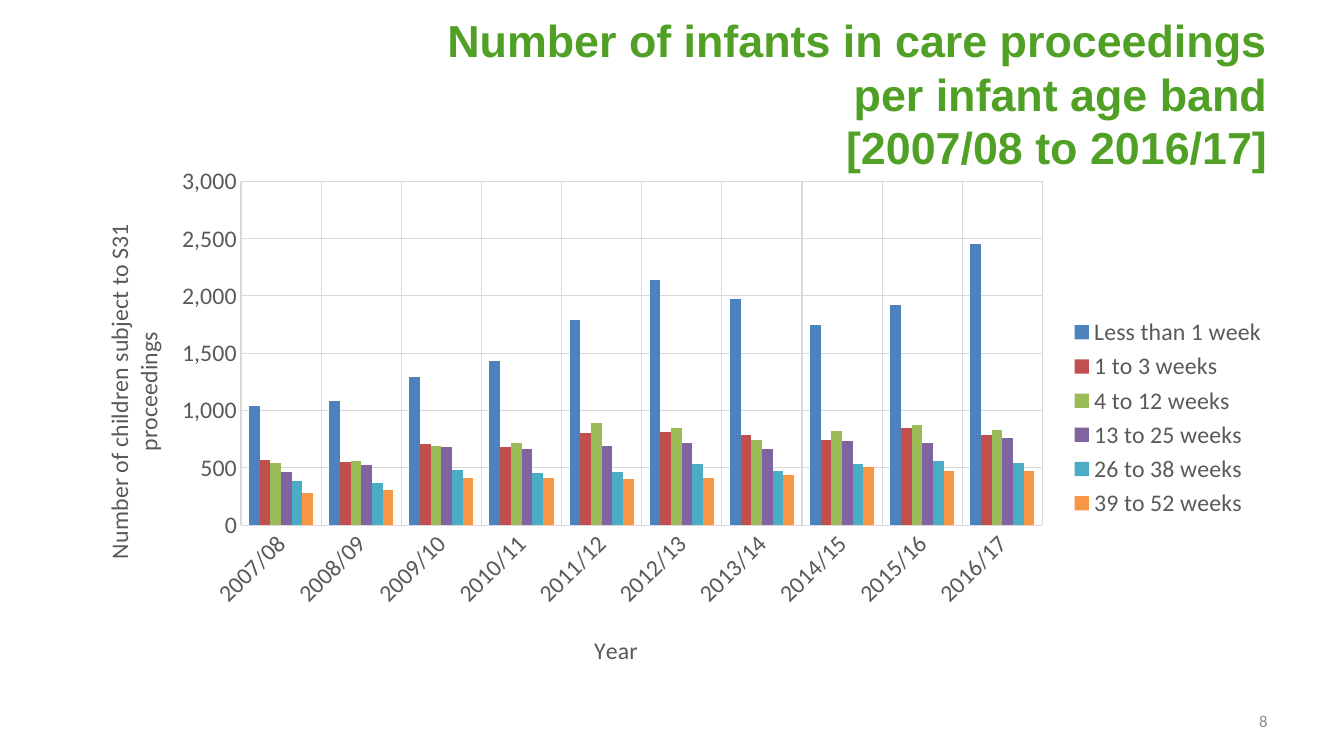
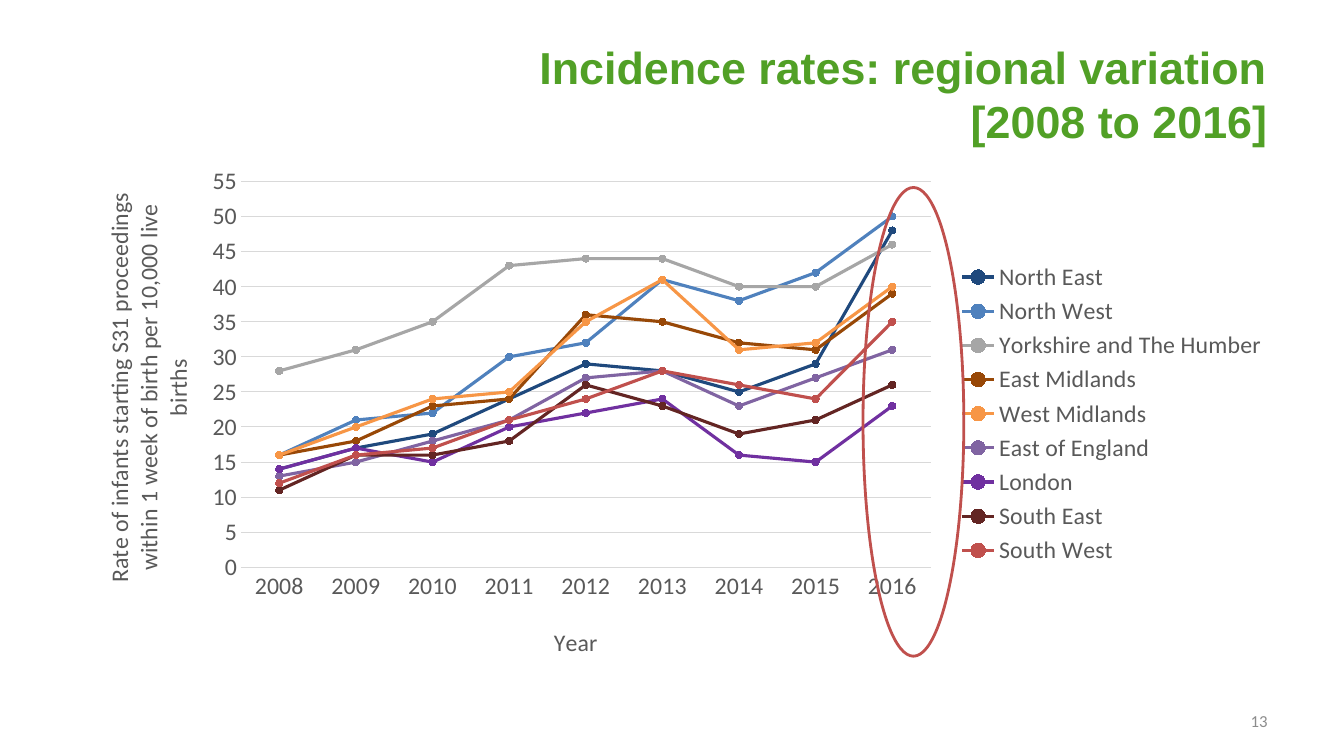
from dataclasses import dataclass

from lxml.etree import SubElement
from pptx import Presentation
from pptx.chart.axis import CategoryAxis, ValueAxis
from pptx.chart.chart import Chart
from pptx.chart.data import CategoryChartData
from pptx.dml.color import RGBColor
from pptx.enum.chart import XL_CHART_TYPE, XL_LEGEND_POSITION, XL_MARKER_STYLE, XL_TICK_MARK
from pptx.enum.shapes import MSO_SHAPE
from pptx.enum.text import MSO_ANCHOR, PP_ALIGN
from pptx.oxml.ns import qn
from pptx.slide import Slide
from pptx.util import Inches, Pt


@dataclass(frozen=True)
class Theme:
    title_color: str = "51A026"
    chart_text: str = "595959"
    number_color: str = "8C8C8C"
    grid: str = "D9D9D9"
    highlight: str = "C0504D"
    title_font: str = "Arial"
    body_font: str = "Calibri"
    title_size: float = 32
    chart_size: float = 17
    number_size: float = 12
    grid_width: float = 0.75
    line_width: float = 2.25
    highlight_width: float = 2
    marker_size: int = 5


@dataclass(frozen=True)
class Box:
    left: float
    top: float
    width: float
    height: float


@dataclass(frozen=True)
class Series:
    name: str
    color: str
    values: tuple[int, ...]


@dataclass(frozen=True)
class ChartSlide:
    title: str
    number: str
    kind: XL_CHART_TYPE
    box: Box
    plot: Box
    value_title: str
    value_title_at: tuple[float, float]
    category_title_at: tuple[float, float]
    number_format: str
    maximum: int
    step: int
    label_angle: int
    categories: tuple[str, ...]
    series: tuple[Series, ...]


THEME = Theme()
TITLE_BOX = Box(0.67, 0.3, 12, 1.25)
NUMBER_BOX = Box(9.56, 6.95, 3.11, 0.4)
HIGHLIGHT_BOX = Box(8.56, 1.86, 1, 4.65)
CATEGORY_TITLE = "Year"

AGE_BANDS = ChartSlide(
    title="Number of infants in care proceedings\vper infant age band\v[2007/08 to 2016/17]",
    number="8",
    kind=XL_CHART_TYPE.COLUMN_CLUSTERED,
    box=Box(0.67, 1.55, 12, 5.19),
    plot=Box(1.72, 0.25, 7.95, 3.41),
    value_title="Number of children subject to S31 proceedings",
    value_title_at=(0.3, 0.63),
    category_title_at=(5.18, 4.69),
    number_format="#,##0",
    maximum=3000,
    step=500,
    label_angle=-45,
    categories=tuple(f"{year}/{(year + 1) % 100:02d}" for year in range(2007, 2017)),
    series=(
        Series("Less than 1 week", "4F81BD", (1040, 1080, 1290, 1430, 1790, 2140, 1970, 1750, 1920, 2450)),
        Series("1 to 3 weeks", "C0504D", (570, 550, 710, 680, 800, 810, 790, 740, 850, 790)),
        Series("4 to 12 weeks", "9BBB59", (540, 560, 690, 720, 890, 850, 740, 820, 870, 830)),
        Series("13 to 25 weeks", "8064A2", (460, 520, 680, 660, 690, 720, 660, 730, 720, 760)),
        Series("26 to 38 weeks", "4BACC6", (380, 370, 480, 450, 460, 530, 470, 530, 560, 540)),
        Series("39 to 52 weeks", "F79646", (280, 310, 410, 410, 400, 410, 440, 510, 470, 470)),
    ),
)

REGIONS = ChartSlide(
    title="Incidence rates: regional variation\v[2008 to 2016]",
    number="13",
    kind=XL_CHART_TYPE.LINE_MARKERS,
    box=Box(0.67, 1.55, 12, 5.11),
    plot=Box(1.72, 0.25, 6.84, 3.83),
    value_title="Rate of infants starting S31 proceedings within 1 week of birth per 10,000 live births",
    value_title_at=(0.3, 0.32),
    category_title_at=(4.78, 4.61),
    number_format="0",
    maximum=55,
    step=5,
    label_angle=0,
    categories=tuple(str(year) for year in range(2008, 2017)),
    series=(
        Series("North East", "1F497D", (14, 17, 19, 24, 29, 28, 25, 29, 48)),
        Series("North West", "4F81BD", (16, 21, 22, 30, 32, 41, 38, 42, 50)),
        Series("Yorkshire and The Humber", "A6A6A6", (28, 31, 35, 43, 44, 44, 40, 40, 46)),
        Series("East Midlands", "984807", (16, 18, 23, 24, 36, 35, 32, 31, 39)),
        Series("West Midlands", "F79646", (16, 20, 24, 25, 35, 41, 31, 32, 40)),
        Series("East of England", "8064A2", (13, 15, 18, 21, 27, 28, 23, 27, 31)),
        Series("London", "7030A0", (14, 17, 15, 20, 22, 24, 16, 15, 23)),
        Series("South East", "632523", (11, 16, 16, 18, 26, 23, 19, 21, 26)),
        Series("South West", "C0504D", (12, 16, 17, 21, 24, 28, 26, 24, 35)),
    ),
)


def place(box: Box) -> tuple[Inches, Inches, Inches, Inches]:
    return Inches(box.left), Inches(box.top), Inches(box.width), Inches(box.height)


def style_font(font, name: str, size: float, color: str, bold: bool = False) -> None:
    font.name = name
    font.size = Pt(size)
    font.bold = bold
    font.color.rgb = RGBColor.from_string(color)


def style_line(line, color: str, width: float) -> None:
    line.color.rgb = RGBColor.from_string(color)
    line.width = Pt(width)


def add_text(slide: Slide, box: Box, text: str, font: str, size: float, color: str, bold: bool = False) -> None:
    text_frame = slide.shapes.add_textbox(*place(box)).text_frame
    text_frame.word_wrap = True
    text_frame.vertical_anchor = MSO_ANCHOR.MIDDLE
    text_frame.text = text
    paragraph = text_frame.paragraphs[0]
    paragraph.alignment = PP_ALIGN.RIGHT
    for run in paragraph.runs:
        style_font(run.font, font, size, color, bold)


def set_layout(element, index: int, settings: dict[str, str | float]) -> None:
    for previous in element.findall(qn("c:layout")):
        element.remove(previous)
    layout = SubElement(element, qn("c:layout"))
    manual = SubElement(layout, qn("c:manualLayout"))
    for name, value in settings.items():
        SubElement(manual, qn(f"c:{name}")).set("val", str(value))
    element.insert(index, layout)


def add_axis_title(
    axis: CategoryAxis | ValueAxis, text: str, position: tuple[float, float], box: Box, angle: int
) -> None:
    title = axis.axis_title
    title.text_frame.text = text
    for run in title.text_frame.paragraphs[0].runs:
        style_font(run.font, THEME.body_font, THEME.chart_size, THEME.chart_text)
    body = title.text_frame._txBody.find(qn("a:bodyPr"))
    body.set("rot", str(angle * 60000))
    body.set("vert", "horz")
    left, top = position
    set_layout(title._element, 1, {
        "xMode": "edge", "yMode": "edge", "x": left / box.width, "y": top / box.height,
    })


def style_axis(axis: CategoryAxis | ValueAxis, has_grid: bool) -> None:
    axis.major_tick_mark = XL_TICK_MARK.NONE
    axis.minor_tick_mark = XL_TICK_MARK.NONE
    style_font(axis.tick_labels.font, THEME.body_font, THEME.chart_size, THEME.chart_text)
    axis.has_major_gridlines = has_grid
    if has_grid:
        style_line(axis.major_gridlines.format.line, THEME.grid, THEME.grid_width)


def style_axes(chart: Chart, content: ChartSlide) -> None:
    category_axis, value_axis = chart.category_axis, chart.value_axis
    style_axis(category_axis, content.kind == XL_CHART_TYPE.COLUMN_CLUSTERED)
    style_line(category_axis.format.line, THEME.grid, THEME.grid_width)
    label_body = category_axis._element.find(qn("c:txPr")).find(qn("a:bodyPr"))
    label_body.set("rot", str(content.label_angle * 60000))
    style_axis(value_axis, True)
    value_axis.format.line.fill.background()
    value_axis.minimum_scale = 0
    value_axis.maximum_scale = content.maximum
    value_axis.major_unit = content.step
    value_axis.tick_labels.number_format = content.number_format
    value_axis.tick_labels.number_format_is_linked = False
    add_axis_title(category_axis, CATEGORY_TITLE, content.category_title_at, content.box, 0)
    add_axis_title(value_axis, content.value_title, content.value_title_at, content.box, -90)


def style_series(chart: Chart, content: ChartSlide) -> None:
    plot = chart.plots[0]
    plot.vary_by_categories = False
    is_column = content.kind == XL_CHART_TYPE.COLUMN_CLUSTERED
    if is_column:
        plot.gap_width = 150
    for drawn, series in zip(plot.series, content.series):
        color = RGBColor.from_string(series.color)
        if is_column:
            drawn.format.fill.solid()
            drawn.format.fill.fore_color.rgb = color
            continue
        drawn.smooth = False
        style_line(drawn.format.line, series.color, THEME.line_width)
        drawn.marker.style = XL_MARKER_STYLE.CIRCLE
        drawn.marker.size = THEME.marker_size
        drawn.marker.format.fill.solid()
        drawn.marker.format.fill.fore_color.rgb = color
        drawn.marker.format.line.color.rgb = color


def add_chart(slide: Slide, content: ChartSlide) -> None:
    data = CategoryChartData(number_format="General")
    data.categories = content.categories
    for series in content.series:
        data.add_series(series.name, series.values)
    chart = slide.shapes.add_chart(content.kind, *place(content.box), data).chart
    chart.has_title = False
    style_font(chart.font, THEME.body_font, THEME.chart_size, THEME.chart_text)
    chart.has_legend = True
    chart.legend.position = XL_LEGEND_POSITION.RIGHT
    chart.legend.include_in_layout = False
    style_font(chart.legend.font, THEME.body_font, THEME.chart_size, THEME.chart_text)
    style_axes(chart, content)
    style_series(chart, content)
    box, plot = content.box, content.plot
    set_layout(chart._chartSpace.chart.plotArea, 0, {
        "layoutTarget": "inner", "xMode": "edge", "yMode": "edge",
        "x": plot.left / box.width, "y": plot.top / box.height,
        "w": plot.width / box.width, "h": plot.height / box.height,
    })


def add_highlight(slide: Slide) -> None:
    ellipse = slide.shapes.add_shape(MSO_SHAPE.OVAL, *place(HIGHLIGHT_BOX))
    ellipse.shadow.inherit = False
    ellipse.fill.background()
    style_line(ellipse.line, THEME.highlight, THEME.highlight_width)


def add_chart_slide(presentation: Presentation, content: ChartSlide) -> Slide:
    slide = presentation.slides.add_slide(presentation.slide_layouts[6])
    add_text(slide, NUMBER_BOX, content.number, THEME.body_font, THEME.number_size, THEME.number_color)
    add_chart(slide, content)
    add_text(slide, TITLE_BOX, content.title, THEME.title_font, THEME.title_size, THEME.title_color, True)
    return slide


def main() -> None:
    presentation = Presentation()
    presentation.slide_width = Inches(13.33)
    presentation.slide_height = Inches(7.5)
    add_chart_slide(presentation, AGE_BANDS)
    add_highlight(add_chart_slide(presentation, REGIONS))
    presentation.save("out.pptx")


if __name__ == "__main__":
    main()
